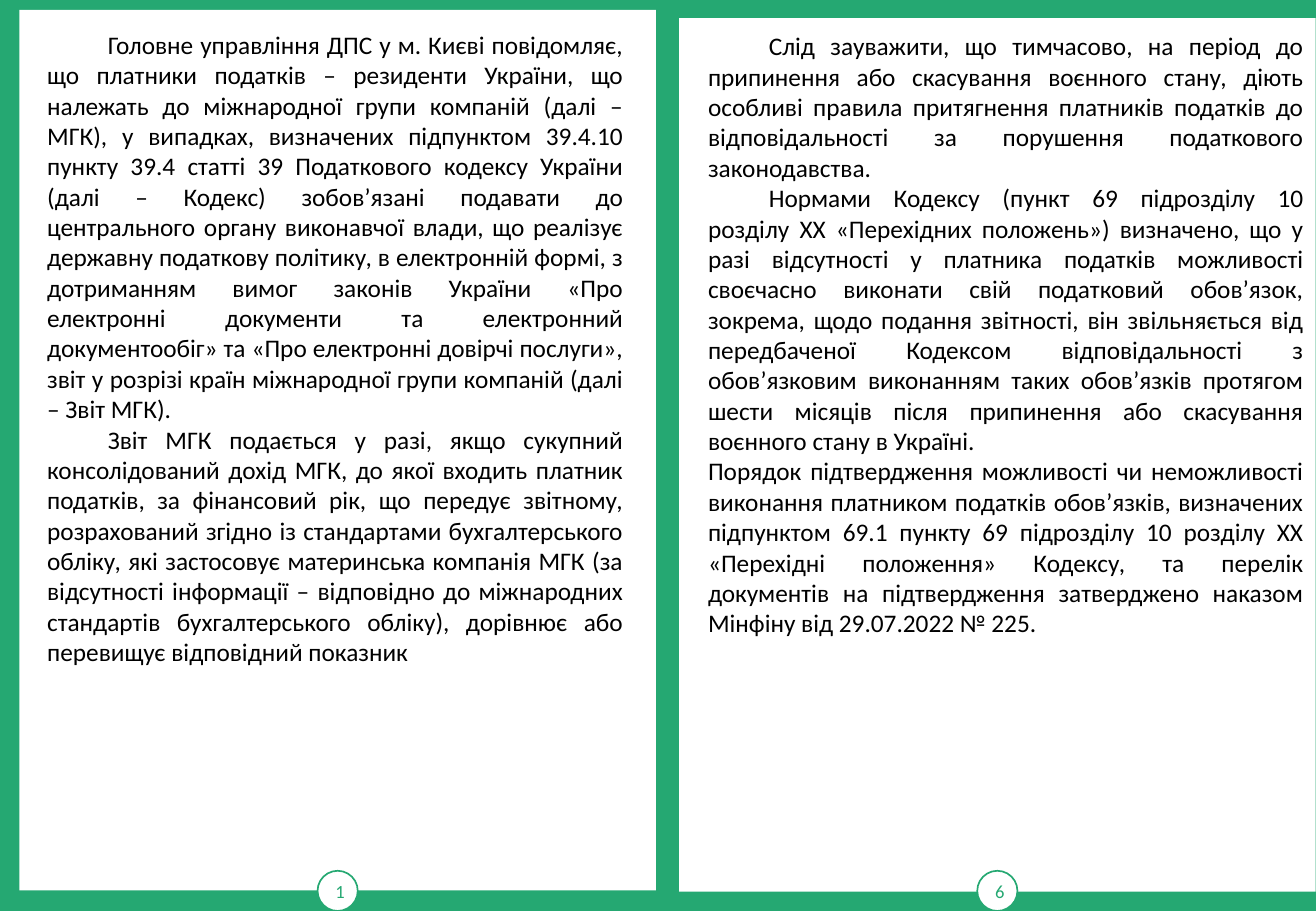
import pptx
import pptx.dml.color
import pptx.enum.shapes
import pptx.enum.text
import pptx.util

Pt = pptx.util.Pt
SHAPES = pptx.enum.shapes.MSO_SHAPE
ALIGN = pptx.enum.text.PP_ALIGN
COLORS = {"green": "25A872", "white": "FFFFFF", "black": "000000"}
FIRST_LINE_INDENT = 36
PANEL_WIDTH = 377.3
BADGE_SIZE = 23.8
BADGE_TOP = 516.2

# Each paragraph is paired with its first-line indent.
PANELS = [
    {
        "number": "1",
        "left": 11.5, "top": 5.8, "height": 522,
        "text_area": (20.9, 13.7, 355.7, 516.2),
        "paragraphs": [
            ("Головне управління ДПС у м. Києві повідомляє, що платники податків – "
             "резиденти України, що належать до міжнародної групи компаній (далі – МГК), "
             "у випадках, визначених підпунктом 39.4.10 пункту 39.4 статті 39 Податкового "
             "кодексу України (далі – Кодекс) зобов’язані подавати до центрального органу "
             "виконавчої влади, що реалізує державну податкову політику, в електронній "
             "формі, з дотриманням вимог законів України «Про електронні документи та "
             "електронний документообіг» та «Про електронні довірчі послуги», звіт у "
             "розрізі країн міжнародної групи компаній (далі – Звіт МГК).",
             FIRST_LINE_INDENT),
            ("Звіт МГК подається у разі, якщо сукупний консолідований дохід МГК, до якої "
             "входить платник податків, за фінансовий рік, що передує звітному, "
             "розрахований згідно із стандартами бухгалтерського обліку, які застосовує "
             "материнська компанія МГК (за відсутності інформації – відповідно до "
             "міжнародних стандартів бухгалтерського обліку), дорівнює або перевищує "
             "відповідний показник",
             FIRST_LINE_INDENT),
        ],
    },
    {
        "number": "6",
        "left": 402.5, "top": 10.8, "height": 517.7,
        "text_area": (412.6, 14.6, 367.2, 479.5),
        "paragraphs": [
            ("Слід зауважити, що тимчасово, на період до припинення або скасування "
             "воєнного стану, діють особливі правила притягнення платників податків до "
             "відповідальності за порушення податкового законодавства.",
             FIRST_LINE_INDENT),
            ("Нормами Кодексу (пункт 69 підрозділу 10 розділу ХХ «Перехідних положень») "
             "визначено, що у разі відсутності у платника податків можливості своєчасно "
             "виконати свій податковий обов’язок, зокрема, щодо подання звітності, він "
             "звільняється від передбаченої Кодексом відповідальності з обов’язковим "
             "виконанням таких обов’язків протягом шести місяців після припинення або "
             "скасування воєнного стану в Україні.",
             FIRST_LINE_INDENT),
            ("Порядок підтвердження можливості чи неможливості виконання платником "
             "податків обов’язків, визначених підпунктом 69.1 пункту 69 підрозділу 10 "
             "розділу ХХ «Перехідні положення» Кодексу, та перелік документів на "
             "підтвердження затверджено наказом Мінфіну від 29.07.2022 № 225.",
             0),
        ],
    },
]


def add_white_shape(kind, left, top, width, height):
    shape = page.shapes.add_shape(kind, Pt(left), Pt(top), Pt(width), Pt(height))
    shape.shadow.inherit = False
    shape.fill.solid()
    shape.fill.fore_color.rgb = pptx.dml.color.RGBColor.from_string(COLORS["white"])
    shape.line.fill.background()
    return shape


def write_paragraph(para, text, size, color, alignment):
    para.alignment = alignment
    span = para.add_run()
    span.text = text
    for name, value in {"name": "Calibri", "size": Pt(size)}.items():
        setattr(span.font, name, value)
    span.font.color.rgb = pptx.dml.color.RGBColor.from_string(COLORS[color])


deck = pptx.Presentation()
deck.slide_width = Pt(780)
deck.slide_height = Pt(540)
page = deck.slides.add_slide(deck.slide_layouts[6])
page.background.fill.solid()
page.background.fill.fore_color.rgb = pptx.dml.color.RGBColor.from_string(COLORS["green"])

for panel in PANELS:
    add_white_shape(SHAPES.RECTANGLE, panel["left"], panel["top"],
                    PANEL_WIDTH, panel["height"])

    badge_left = panel["left"] + (PANEL_WIDTH - BADGE_SIZE) / 2
    badge = add_white_shape(SHAPES.OVAL, badge_left, BADGE_TOP, BADGE_SIZE, BADGE_SIZE)
    badge.line.color.rgb = pptx.dml.color.RGBColor.from_string(COLORS["green"])
    badge.line.width = Pt(1)
    badge.text_frame.vertical_anchor = pptx.enum.text.MSO_ANCHOR.MIDDLE
    write_paragraph(badge.text_frame.paragraphs[0], panel["number"], 11, "green",
                    ALIGN.CENTER)

    box = page.shapes.add_textbox(*[Pt(length) for length in panel["text_area"]])
    box.text_frame.word_wrap = True
    for index, (text, indent) in enumerate(panel["paragraphs"]):
        para = box.text_frame.add_paragraph() if index else box.text_frame.paragraphs[0]
        write_paragraph(para, text, 15, "black", ALIGN.JUSTIFY)
        para._p.get_or_add_pPr().set("indent", str(int(Pt(indent))))

deck.save("out.pptx")
